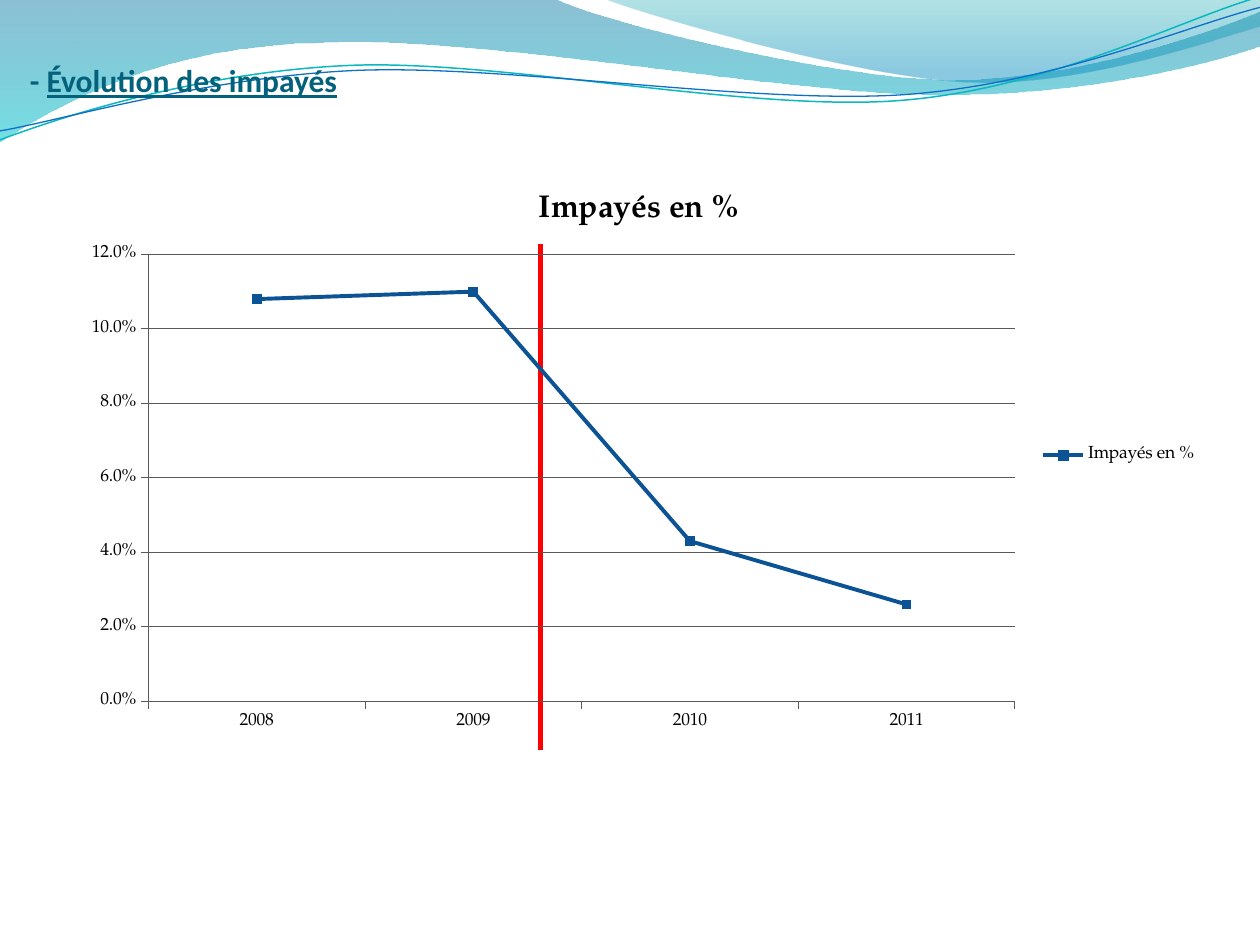
from dataclasses import dataclass

from lxml.etree import SubElement
from pptx import Presentation
from pptx.chart.data import CategoryChartData
from pptx.dml.color import RGBColor
from pptx.enum.chart import XL_CHART_TYPE, XL_LEGEND_POSITION, XL_MARKER_STYLE, XL_TICK_MARK
from pptx.enum.shapes import MSO_CONNECTOR
from pptx.enum.text import MSO_ANCHOR, MSO_AUTO_SIZE, PP_ALIGN
from pptx.oxml import parse_xml
from pptx.oxml.ns import nsdecls, qn
from pptx.util import Cm, Pt


@dataclass(frozen=True)
class Theme:
    title: str = "04617B"
    text: str = "000000"
    grid: str = "595959"
    series: str = "0B5394"
    mark: str = "FF0000"
    head_font: str = "Calibri"
    body_font: str = "TeX Gyre Pagella"
    head_size: int = 18
    body_size: int = 10


THEME = Theme()

# Points in cm: a start, then lines (x, y) or curves (two handles and an end).
# Fill stops are position, colour and opacity in percent.
BANDS = [
    {"start": (-0.02, -0.03),
     "steps": [(11.18, -0.03),
               (12.09, 0.43, 16.87, 1.6, 19.25, 1.6),
               (21.67, 1.6, 24.33, 0.66, 25.4, 0.23),
               (25.43, 0.91),
               (24.97, 1.12, 22.1, 1.93, 18.95, 1.91),
               (15.8, 1.91, 9.7, 0.71, 6.53, 0.86),
               (3.28, 0.89, 1.17, 2.11, -0.03, 2.87)],
     "stops": [(0, "0074A1", 45), (1, "00C6CF", 55)]},
    {"start": (12.17, -0.03),
     "steps": [(12.93, 0.28, 17.32, 1.57, 19.53, 1.65),
               (21.74, 1.75, 24.41, 0.81, 25.4, 0.53),
               (25.4, 0)],
     "stops": [(0, "00A1A9", 30), (0.8, "008BBF", 45)]},
]
WAVES = [
    {"start": (0, 2.82),
     "steps": [(1.22, 2.36, 4.01, 1.45, 7.04, 1.32),
               (10.03, 1.19, 15.06, 2.26, 18.11, 2.03),
               (21.16, 1.8, 23.83, 0.38, 25.35, -0.05)],
     "color": "0AB8BF", "width": 0.85},
    {"start": (0, 2.64),
     "steps": [(1.19, 2.44, 4.17, 1.55, 7.19, 1.42),
               (10.24, 1.3, 15.16, 2.11, 18.21, 1.91),
               (21.23, 1.7, 23.9, 0.53, 25.4, 0.15)],
     "color": "0F6FC6", "width": 0.75},
]


def apply(target, values):
    for name, value in values.items():
        setattr(target, name, value)


def rgb(code):
    return RGBColor.from_string(code)


def style(font, face, size, color, **more):
    apply(font, {"name": face, "size": Pt(size), **more})
    font.color.rgb = rgb(color)


def stroke(line, color, width):
    line.color.rgb = rgb(color)
    line.width = Pt(width)


def bend(shape, steps):
    """Turn each run of three lines that stands for a curve into one curve."""
    lines = iter(list(shape.element.iter(qn("a:lnTo"))))
    for step in steps:
        first = next(lines)
        if len(step) == 6:
            first.tag = qn("a:cubicBezTo")
            for _ in range(2):
                extra = next(lines)
                first.append(extra[0])
                extra.getparent().remove(extra)


def add_path(slide, start, steps, close):
    pen = slide.shapes.build_freeform(*map(Cm, start))
    knots = [(Cm(step[i]), Cm(step[i + 1])) for step in steps for i in range(0, len(step), 2)]
    pen.add_line_segments(knots, close=close)
    shape = pen.convert_to_shape()
    bend(shape, steps)
    shape.shadow.inherit = False
    return shape


def add_band(slide, start, steps, stops):
    shape = add_path(slide, start, steps, True)
    shape.line.fill.background()
    shape.fill.gradient()
    shape.fill.gradient_angle = 270
    for stop, (place, color, _) in zip(shape.fill.gradient_stops, stops):
        stop.position = place
        stop.color.rgb = rgb(color)
    tints = shape.element.spPr.iter(qn("a:srgbClr"))
    for tint, (_, _, alpha) in zip(list(tints), stops):
        SubElement(tint, qn("a:alpha")).set("val", str(alpha * 1000))
    return shape


def add_wave(slide, start, steps, color, width):
    shape = add_path(slide, start, steps, False)
    shape.fill.background()
    stroke(shape.line, color, width)
    return shape


def add_decor(slide):
    """Draw bands and waves, then move them to the back of the layout."""
    shapes = [add_band(slide, **band) for band in BANDS]
    shapes += [add_wave(slide, **wave) for wave in WAVES]
    anchor = slide.slide_layout.placeholders[0].element
    for shape in shapes:
        anchor.addprevious(shape.element)


def set_title(slide):
    title = slide.shapes.title
    apply(title, {"left": Cm(0.6), "top": Cm(0.27), "width": Cm(11.4), "height": Cm(1.73)})
    frame = title.text_frame
    apply(frame, {"margin_left": 0, "margin_right": 0, "margin_top": Cm(0.13),
                  "margin_bottom": 0, "word_wrap": True,
                  "auto_size": MSO_AUTO_SIZE.NONE, "vertical_anchor": MSO_ANCHOR.BOTTOM})
    line = frame.paragraphs[0]
    line.alignment = PP_ALIGN.LEFT
    for text, under in (("- ", False), ("Évolution des impayés", True)):
        run = line.add_run()
        run.text = text
        style(run.font, THEME.head_font, THEME.head_size, THEME.title,
              bold=True, underline=under)


def add_mark(slide):
    line = slide.shapes.add_connector(
        MSO_CONNECTOR.STRAIGHT, Cm(10.9), Cm(4.92), Cm(10.9), Cm(15.11))
    stroke(line.line, THEME.mark, 3)
    SubElement(line.element.spPr, qn("a:effectLst"))


def fix_plot(frame, x, y, w, h):
    """Pin the inner plot area, given in lengths from the chart's corner."""
    area = frame.chart.element.find(".//" + qn("c:plotArea"))
    for old in area.findall(qn("c:layout")):
        area.remove(old)
    box = {"x": x / frame.width, "y": y / frame.height,
           "w": w / frame.width, "h": h / frame.height}
    sizes = "".join(f'<c:{key} val="{value:.4f}"/>' for key, value in box.items())
    area.insert(0, parse_xml(
        f'<c:layout {nsdecls("c")}><c:manualLayout><c:layoutTarget val="inner"/>'
        f'<c:xMode val="edge"/><c:yMode val="edge"/>{sizes}</c:manualLayout></c:layout>'))


def add_graph(slide):
    name = "Impayés en %"
    data = CategoryChartData(number_format="0.0%")
    data.categories = ["2008", "2009", "2010", "2011"]
    data.add_series(name, [0.108, 0.11, 0.043, 0.026])
    graph = slide.shapes.add_chart(XL_CHART_TYPE.LINE_MARKERS, Cm(1.39), Cm(3.38),
                                   Cm(23), Cm(11.6), data)
    chart = graph.chart
    style(chart.font, THEME.body_font, THEME.body_size, THEME.text)
    apply(chart, {"has_title": True, "has_legend": True})
    apply(chart.legend, {"position": XL_LEGEND_POSITION.RIGHT, "include_in_layout": False})
    frame = chart.chart_title.text_frame
    frame.text = name
    style(frame.paragraphs[0].runs[0].font, THEME.body_font, THEME.head_size,
          THEME.text, bold=True)
    scale = chart.value_axis
    apply(scale, {"minimum_scale": 0, "maximum_scale": 0.12, "major_unit": 0.02,
                  "has_major_gridlines": True})
    apply(scale.tick_labels, {"number_format": "0.0%", "number_format_is_linked": False})
    stroke(scale.major_gridlines.format.line, THEME.grid, 0.5)
    for axis in (scale, chart.category_axis):
        axis.major_tick_mark = XL_TICK_MARK.OUTSIDE
        stroke(axis.format.line, THEME.grid, 0.5)
    plot = chart.plots[0]
    plot.vary_by_categories = False
    series = plot.series[0]
    series.smooth = False
    stroke(series.format.line, THEME.series, 2.25)
    apply(series.marker, {"style": XL_MARKER_STYLE.SQUARE, "size": 5})
    series.marker.format.fill.solid()
    series.marker.format.fill.fore_color.rgb = rgb(THEME.series)
    stroke(series.marker.format.line, THEME.series, 0.75)
    fix_plot(graph, Cm(1.6), Cm(1.75), Cm(17.47), Cm(9.01))


def main():
    deck = Presentation()
    apply(deck, {"slide_width": Cm(25.4), "slide_height": Cm(19.05)})
    slide = deck.slides.add_slide(deck.slide_layouts[5])
    add_decor(slide)
    set_title(slide)
    add_mark(slide)
    add_graph(slide)
    deck.save("out.pptx")


if __name__ == "__main__":
    main()
